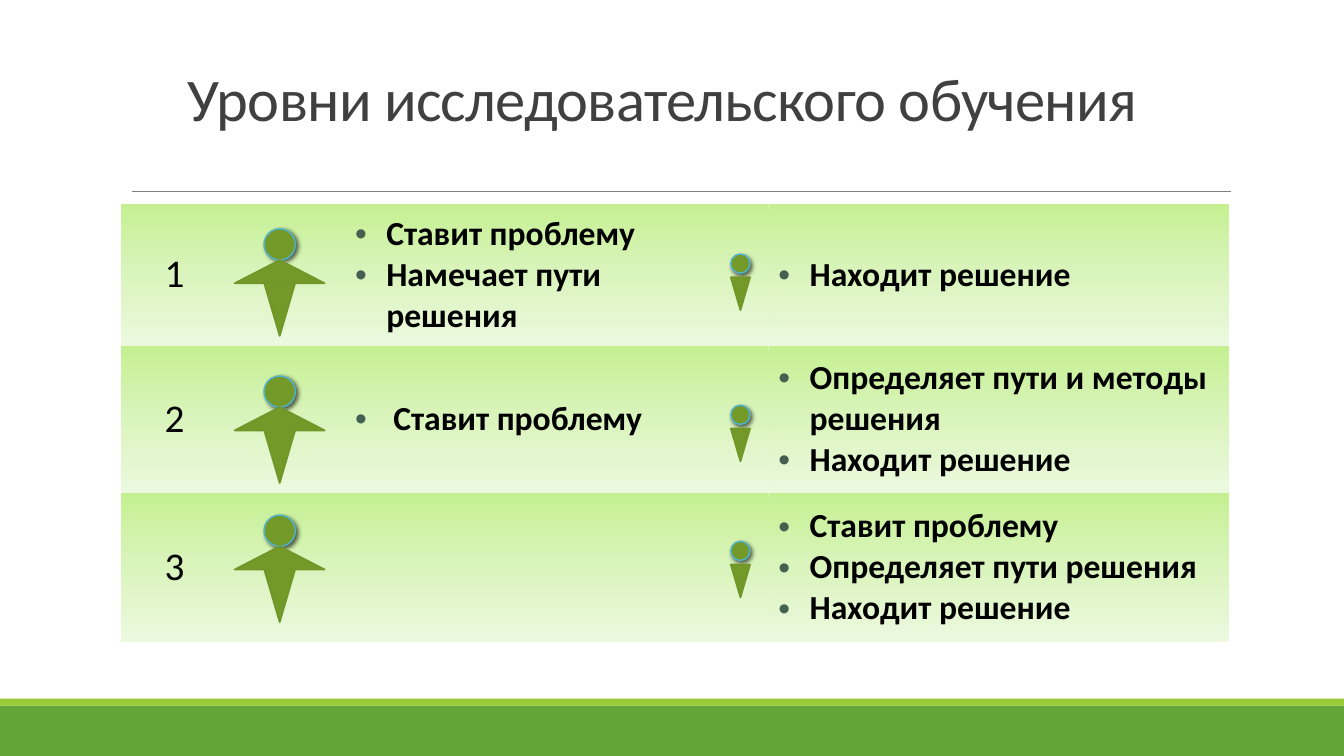
from dataclasses import dataclass

from lxml.etree import SubElement
from pptx import Presentation
from pptx.dml.color import RGBColor
from pptx.enum.shapes import MSO_CONNECTOR, MSO_SHAPE as SHAPE
from pptx.enum.text import MSO_ANCHOR as ANCHOR, PP_ALIGN as ALIGN
from pptx.oxml import parse_xml
from pptx.oxml.ns import nsdecls, qn
from pptx.util import Emu, Inches, Pt

SLIDE_W, SLIDE_H = Inches(13.33), Inches(7.5)
FONT = "Calibri"
NO_TABLE_STYLE = "{2D5ABB26-0587-4C30-8999-92F81FD0307C}"

WHITE = RGBColor(0xFF, 0xFF, 0xFF)
BLACK = RGBColor(0x00, 0x00, 0x00)
TITLE_GREY = RGBColor(0x40, 0x40, 0x40)
RULE_GREY = RGBColor(0x80, 0x80, 0x80)
FOOTER_GREEN = RGBColor(0x63, 0xA5, 0x37)
STRIPE_GREEN = RGBColor(0x99, 0xCB, 0x38)
BULLET_GREEN = RGBColor(0x45, 0x5F, 0x51)
PERSON_GREEN = RGBColor(0x73, 0x9A, 0x28)
PERSON_EDGE = RGBColor(0x71, 0x96, 0x29)
HEAD_EDGE = RGBColor(0x4E, 0xB3, 0xCF)
ROW_GRADIENT = {
    0: RGBColor(0xC5, 0xF0, 0x92),
    50: RGBColor(0xDA, 0xF4, 0xBD),
    100: RGBColor(0xEC, 0xF9, 0xDF),
}


def across(percent: float) -> Emu:
    return Emu(round(SLIDE_W * percent / 100))


def down(percent: float) -> Emu:
    return Emu(round(SLIDE_H * percent / 100))


@dataclass(frozen=True)
class Level:
    """One table row; heights and head tops are percent of the slide height."""
    height: float
    teacher_top: float
    learner_top: float
    teacher_tasks: tuple[str, ...]
    learner_tasks: tuple[str, ...]
    teacher_indent: float = 0.31


@dataclass(frozen=True)
class Person:
    """Centre and head are percent of the slide width; body_drop is in heads."""
    centre: float
    head: float
    body_drop: float
    has_arms: bool


TABLE_LEFT, TABLE_TOP = 9.02, 26.93
COLUMNS = (7.95, 8.7, 27.08, 4.42, 34.27)
LEVELS = (
    Level(18.8, 30.27, 33.6, ("Ставит проблему", "Намечает пути решения"),
          ("Находит решение",)),
    Level(19.47, 49.73, 53.6, ("Ставит проблему",),
          ("Определяет пути и методы решения", "Находит решение"), 0.38),
    Level(19.73, 68.13, 71.6, (),
          ("Ставит проблему", "Определяет пути решения", "Находит решение")),
)
TEACHER = Person(20.81, 2.33, 1.71, True)
LEARNER = Person(55.09, 1.43, 1.21, False)
ARMS_WIDTH, ARMS_HEIGHT, BODY_HEIGHT = 2.87, 0.74, 1.71


def format_run(run, **font_values) -> None:
    colour = font_values.pop("colour")
    for attribute, value in {"name": FONT, **font_values}.items():
        setattr(run.font, attribute, value)
    run.font.color.rgb = colour


def add_filled(shapes, kind, box, fill: RGBColor, edge: RGBColor | None = None,
               edge_width: float = 1):
    shape = shapes.add_shape(kind, *box)
    shape.shadow.inherit = False
    shape.fill.solid()
    shape.fill.fore_color.rgb = fill
    if edge is None:
        shape.line.fill.background()
    else:
        shape.line.color.rgb = edge
        shape.line.width = Pt(edge_width)
    return shape


def add_backdrop(slide) -> None:
    slide.background.fill.solid()
    slide.background.fill.fore_color.rgb = WHITE
    for top, height, colour in ((93.33, 6.67, FOOTER_GREEN),
                                (92.4, 0.93, STRIPE_GREEN)):
        add_filled(slide.shapes, SHAPE.RECTANGLE,
                   (0, down(top), SLIDE_W, down(height)), colour)
    rule = slide.shapes.add_connector(MSO_CONNECTOR.STRAIGHT, across(9.83),
                                      down(25.33), across(91.6), down(25.33))
    rule.line.color.rgb = RULE_GREY
    rule.line.width = Pt(0.5)
    SubElement(rule._element.spPr, qn("a:effectLst"))


def add_title(slide, wording: str) -> None:
    frame = slide.shapes.add_textbox(across(11.03), down(3.07),
                                     across(76.52), down(15.33)).text_frame
    frame.word_wrap = True
    frame.vertical_anchor = ANCHOR.BOTTOM
    paragraph = frame.paragraphs[0]
    paragraph.alignment = ALIGN.CENTER
    paragraph.line_spacing = 0.85
    run = paragraph.add_run()
    run.text = wording
    format_run(run, size=Pt(43.2), colour=TITLE_GREY)
    run.font._element.set("spc", "-50")


def shade_cell(cell) -> None:
    stops = "".join(f'<a:gs pos="{place * 1000}"><a:srgbClr val="{colour}"/></a:gs>'
                    for place, colour in ROW_GRADIENT.items())
    cell._tc.get_or_add_tcPr().append(parse_xml(
        f'<a:gradFill {nsdecls("a")} rotWithShape="1"><a:gsLst>{stops}</a:gsLst>'
        '<a:lin ang="5400000" scaled="0"/></a:gradFill>'))


def add_bullet(paragraph, indent: float) -> None:
    properties = paragraph._p.get_or_add_pPr()
    properties.set("marL", str(Inches(indent)))
    properties.set("indent", str(-Inches(indent)))
    colour = SubElement(properties, qn("a:buClr"))
    SubElement(colour, qn("a:srgbClr")).set("val", str(BULLET_GREEN))
    SubElement(properties, qn("a:buFont")).set("typeface", "Arial")
    SubElement(properties, qn("a:buChar")).set("char", "•")


def write_tasks(cell, tasks: tuple[str, ...], indent: float) -> None:
    frame = cell.text_frame
    for index, task in enumerate(tasks):
        paragraph = frame.add_paragraph() if index else frame.paragraphs[0]
        add_bullet(paragraph, indent)
        run = paragraph.add_run()
        run.text = task
        format_run(run, size=Pt(24), bold=True, colour=BLACK)


def add_levels_table(slide) -> None:
    table = slide.shapes.add_table(
        len(LEVELS), len(COLUMNS), across(TABLE_LEFT), down(TABLE_TOP),
        across(sum(COLUMNS)), down(sum(level.height for level in LEVELS))).table
    table.first_row = table.horz_banding = False
    table._tbl.tblPr.find(qn("a:tableStyleId")).text = NO_TABLE_STYLE
    for column, width in zip(table.columns, COLUMNS):
        column.width = across(width)
    for number, (row, level) in enumerate(zip(table.rows, LEVELS), start=1):
        row.height = down(level.height)
        for cell in row.cells:
            cell.vertical_anchor = ANCHOR.MIDDLE
            shade_cell(cell)
        label = row.cells[0].text_frame.paragraphs[0]
        label.alignment = ALIGN.CENTER
        run = label.add_run()
        run.text = str(number)
        format_run(run, size=Pt(28), bold=False, colour=BLACK)
        write_tasks(row.cells[2], level.teacher_tasks, level.teacher_indent)
        write_tasks(row.cells[4], level.learner_tasks, 0.31)


def add_head_shadow(head) -> None:
    head._element.spPr.find(qn("a:effectLst")).append(parse_xml(
        f'<a:outerShdw {nsdecls("a")} blurRad="{Pt(3)}" dist="{Pt(2)}" '
        'dir="2700000" rotWithShape="0"><a:srgbClr val="000000">'
        '<a:alpha val="60000"/></a:srgbClr></a:outerShdw>'))


def add_person(slide, person: Person, top_percent: float) -> None:
    parts = slide.shapes.add_group_shape().shapes
    unit, centre, top = across(person.head), across(person.centre), down(top_percent)

    def box(drop: float, width: float, height: float) -> tuple[Emu, ...]:
        """Turn head units into a box centred on the person."""
        return tuple(Emu(round(length)) for length in (
            centre - unit * width / 2, top + unit * drop,
            unit * width, unit * height))

    head = add_filled(parts, SHAPE.OVAL, box(0, 1, 1), PERSON_GREEN, HEAD_EDGE)
    add_head_shadow(head)
    if person.has_arms:
        add_filled(parts, SHAPE.ISOSCELES_TRIANGLE, box(1, ARMS_WIDTH, ARMS_HEIGHT),
                   PERSON_GREEN, PERSON_EDGE, 1.25)
    body = add_filled(parts, SHAPE.ISOSCELES_TRIANGLE,
                      box(person.body_drop, 1, BODY_HEIGHT),
                      PERSON_GREEN, PERSON_EDGE, 1.25)
    body.rotation = 180


def main() -> None:
    deck = Presentation()
    deck.slide_width, deck.slide_height = SLIDE_W, SLIDE_H
    slide = deck.slides.add_slide(deck.slide_layouts[6])
    add_backdrop(slide)
    add_title(slide, "Уровни исследовательского обучения")
    add_levels_table(slide)
    for level in LEVELS:
        add_person(slide, TEACHER, level.teacher_top)
        add_person(slide, LEARNER, level.learner_top)
    deck.save("out.pptx")


if __name__ == "__main__":
    main()
